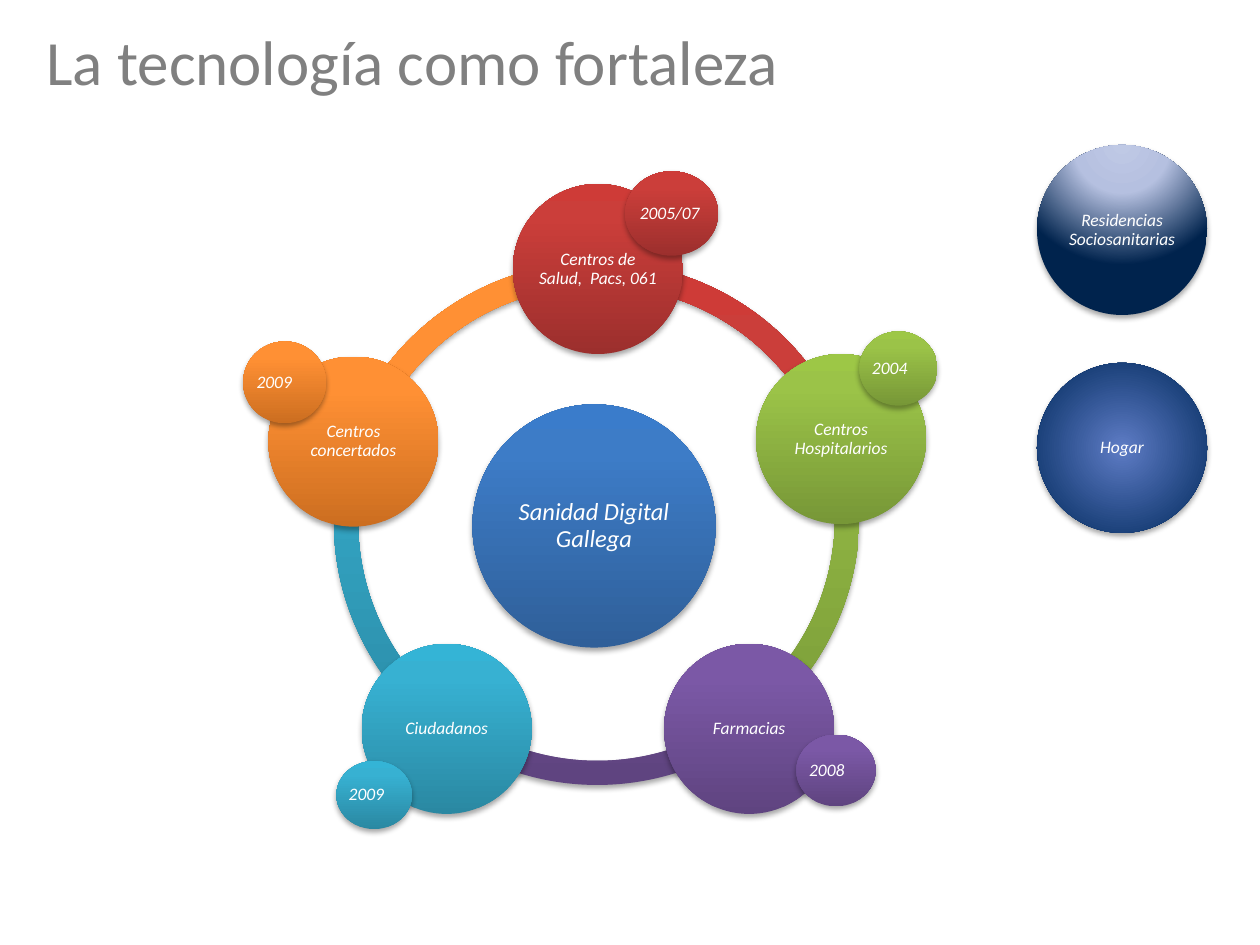
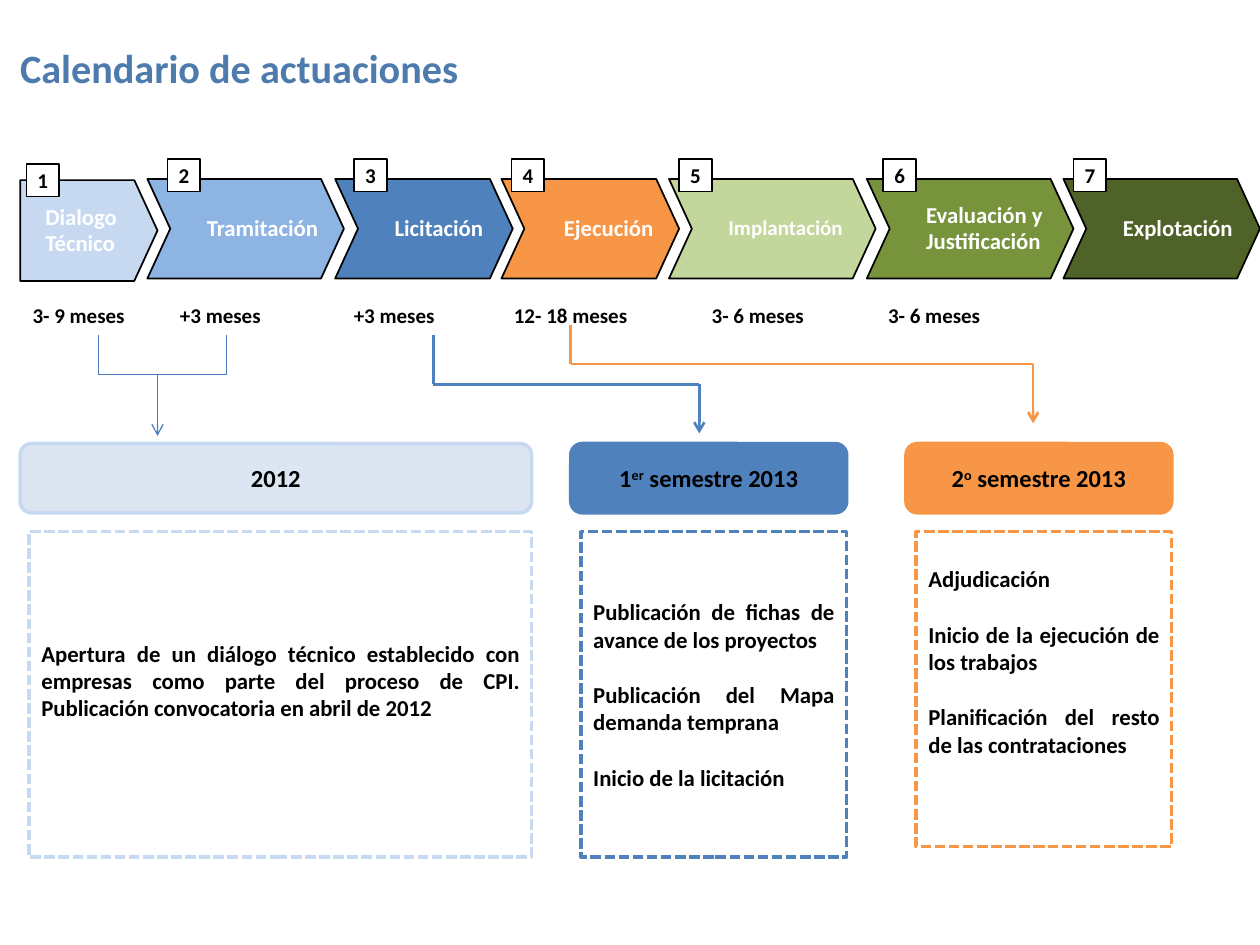
from lxml import etree
from pptx import Presentation
from pptx import util as u
from pptx.dml.color import RGBColor
from pptx.enum import dml, shapes, text
from pptx.oxml import parse_xml
from pptx.oxml.ns import nsdecls, qn

# Theme: gradients run from bottom to top
THEME = {
    "font": "Calibri",
    "white": "FFFFFF", "black": "000000", "grey": "808080", "title": "4D7BAD",
    "pale": "C6D9F1", "paler": "DCE6F2", "sky": "8EB4E3", "blue": "4F81BD",
    "thin": "4B7EBC", "orange": "F79646", "lime": "C3D69B", "olive": "77933C",
    "forest": "4F6228",
    "size": {"title": 36, "heading": 23, "hub": 14, "node": 10,
             "step": 13, "label": 12, "period": 14, "body": 13},
    "grad": {
        "red": [(0, "9C2F2D"), (80, "CB3E3A"), (100, "CE3B37")],
        "green": [(0, "779737"), (80, "9BC348"), (100, "9DC746")],
        "purple": [(0, "5F4480"), (80, "7B58A6"), (100, "7C57A8")],
        "cyan": [(0, "2A88A2"), (80, "37B1D2"), (100, "34B4D6")],
        "orange": [(0, "CC6E20"), (80, "FF9034"), (100, "FF9136")],
        "blue": [(0, "2F5F99"), (80, "3D7CC7"), (100, "3A7CCB")],
        "glow": [(0, "BFC9E5"), (40, "B5C0E0"), (100, "00234D")],
        "navy": [(0, "5E7CC5"), (100, "00295C")],
    },
}
SIZE = THEME["size"]

# Slide 1 content: colour, arc corner, arc ends, node, node corner, year, year box
TITLE = "La tecnología como fortaleza"
RING, THICK, NODE = 4.18, 0.046, 1.35
HUB = ("Sanidad Digital Gallega", (3.75, 3.21, 1.93, 1.93))
NODES = [
    ("red", (2.67, 2.08), (161.79, 204.09), "Centros de Salud,  Pacs, 061",
     (4.07, 1.46), "2005/07", (4.96, 1.36, 0.74, 0.67)),
    ("green", (2.64, 2.01), (204.73, 32.41), "Centros Hospitalarios",
     (6, 2.81), "2004", (6.82, 2.63, 0.62, 0.59)),
    ("purple", (2.65, 2.05), (32.4, 75.6), "Farmacias",
     (5.27, 5.11), "2008", (6.32, 5.83, 0.63, 0.57)),
    ("cyan", (2.65, 2.05), (75.6, 118.8), "Ciudadanos",
     (2.87, 5.11), "2009", (2.67, 6.04, 0.6, 0.54)),
    ("orange", (2.64, 2.08), (119.43, 162.2), "Centros concertados",
     (2.13, 2.83), "2009", (1.93, 2.71, 0.66, 0.65)),
]
# Outer nodes: text, gradient, corner, focus of the radial gradient
OUTER = [
    ("Residencias Sociosanitarias", "glow", (8.23, 1.15), (50, -80, 50, 180)),
    ("Hogar", "navy", (8.23, 2.88), (50, 50, 50, 50)),
]

# Slide 2 content: step, fill, left, width, number left, duration, duration left
HEADING = "Calendario de actuaciones"
STEPS = [
    ("Dialogo Técnico", "pale", 0.16, 1.09, 0.21, "3- 9 meses", 0.16),
    ("Tramitación", "sky", 1.17, 1.56, 1.33, "+3 meses", 1.33),
    ("Licitación", "blue", 2.66, 1.41, 2.81, "+3 meses", 2.71),
    ("Ejecución", "orange", 3.98, 1.41, 4.06, "12- 18 meses", 3.98),
    ("Implantación", "lime", 5.31, 1.64, 5.39, "3- 6 meses", 5.55),
    ("Evaluación y Justificación", "olive", 6.88, 1.64, 7.01, "3- 6 meses", 6.95),
    ("Explotación", "forest", 8.44, 1.56, 8.52, None, None),
]
# Period: runs (text, raised), fill, line, left, width, body left, body height,
# lines of room kept under the body text, body paragraphs
PERIODS = [
    ([("2012", False)], "paler", "pale", 0.16, 4.06, 0.23, 2.58, 1,
     ["Apertura de un diálogo técnico establecido con empresas como parte del "
      "proceso de CPI. Publicación convocatoria en abril de 2012"]),
    ([("1", False), ("er", True), (" semestre 2013", False)],
     "blue", "blue", 4.53, 2.19, 4.61, 2.58, 0,
     ["Publicación de fichas de avance de los proyectos",
      "Publicación del Mapa demanda temprana", "Inicio de la licitación"]),
    ([("2", False), ("o", True), (" semestre 2013", False)],
     "orange", "orange", 7.19, 2.11, 7.27, 2.5, 2,
     ["Adjudicación", "Inicio de la ejecución de los trabajos",
      "Planificación del resto de las contrataciones"]),
]
# Links: colour, width, points; the last segment carries an arrow if asked
LINKS = [
    ("blue", 1.5, [(3.44, 2.66), (3.44, 3.05), (5.55, 3.05), (5.55, 3.44)], True),
    ("orange", 1.5, [(4.53, 2.58), (4.53, 2.89), (8.2, 2.89), (8.2, 3.36)], True),
    ("thin", 0.75, [(0.78, 2.66), (0.78, 2.97), (1.8, 2.97), (1.8, 2.66)], False),
    ("thin", 0.75, [(1.25, 2.97), (1.25, 3.46)], True),
]

KIND = shapes.MSO_SHAPE
LEFT, CENTER, JUSTIFY = (text.PP_ALIGN.LEFT, text.PP_ALIGN.CENTER,
                         text.PP_ALIGN.JUSTIFY)
TOP, MIDDLE, BOTTOM = (text.MSO_ANCHOR.TOP, text.MSO_ANCHOR.MIDDLE,
                       text.MSO_ANCHOR.BOTTOM)


def rgb(name):
    return RGBColor.from_string(THEME[name])


def write(sp, paragraphs, size, color, align=LEFT, anchor=MIDDLE,
          insets=(0.1, 0.05, 0.1, 0.05), wrap=True, indent=0, gap=0,
          spacing=None, **font):
    """Fill a shape with text; a paragraph is a string or (text, raised) runs."""
    tf = sp.text_frame
    sides = ("margin_left", "margin_top", "margin_right", "margin_bottom")
    frame = dict(zip(sides, map(u.Inches, insets)),
                 word_wrap=wrap, vertical_anchor=anchor)
    for key, value in frame.items():
        setattr(tf, key, value)
    for i, runs in enumerate(paragraphs):
        p = tf.add_paragraph() if i else tf.paragraphs[0]
        p.alignment = align
        if spacing:
            p.line_spacing = spacing
        if i and gap:
            p.space_before = u.Pt(gap)
        if indent:
            pPr = p._p.get_or_add_pPr()
            pPr.set("marL", str(u.Inches(indent)))
            pPr.set("indent", "0")
        for words, raised in [(runs, False)] if isinstance(runs, str) else runs:
            r = p.add_run()
            r.text = words
            look = dict(name=THEME["font"], size=u.Pt(size), **font)
            for key, value in look.items():
                setattr(r.font, key, value)
            r.font.color.rgb = rgb(color)
            if raised:
                r._r.get_or_add_rPr().set("baseline", "30000")


def label(s, box, words, size, color, **fmt):
    sp = s.shapes.add_textbox(*map(u.Inches, box))
    write(sp, [words], size, color, **fmt)


def shape(s, kind, box, fill=None, line=None, width=1, adj=()):
    sp = s.shapes.add_shape(kind, *map(u.Inches, box))
    sp.shadow.inherit = False
    for i, value in enumerate(adj):
        sp.adjustments[i] = value
    if fill:
        sp.fill.solid()
        sp.fill.fore_color.rgb = rgb(fill)
    if line:
        sp.line.color.rgb = rgb(line)
        sp.line.width = u.Pt(width)
    else:
        sp.line.fill.background()
    return sp


def glossy(s, kind, box, grad, focus=None, adj=()):
    """Borderless shape with a gradient and a soft shadow below it."""
    sp = shape(s, kind, box, adj=adj)
    stops = "".join(f'<a:gs pos="{pos * 1000}"><a:srgbClr val="{c}"/></a:gs>'
                    for pos, c in THEME["grad"][grad])
    if focus:
        rect = " ".join(f'{k}="{v * 1000}"' for k, v in zip("ltrb", focus))
        way = f'<a:path path="circle"><a:fillToRect {rect}/></a:path>'
    else:
        way = '<a:lin ang="16200000" scaled="0"/>'
    spPr = sp._element.spPr
    spPr.find(qn("a:prstGeom")).addnext(parse_xml(
        f'<a:gradFill {nsdecls("a")} rotWithShape="1">'
        f'<a:gsLst>{stops}</a:gsLst>{way}</a:gradFill>'))
    spPr.find(qn("a:effectLst")).append(parse_xml(
        f'<a:outerShdw {nsdecls("a")} blurRad="40000" dist="23000" dir="5400000" '
        'rotWithShape="0"><a:srgbClr val="000000"><a:alpha val="35000"/>'
        '</a:srgbClr></a:outerShdw>'))
    return sp


def bubble(s, box, words, grad, size=SIZE["node"], align=CENTER, focus=None):
    sp = glossy(s, KIND.OVAL, box, grad, focus)
    write(sp, [words], size, "white", align=align, insets=(0.01,) * 4,
          spacing=0.9, italic=True)


def link(s, points, color, width, arrow):
    for i, (a, b) in enumerate(zip(points, points[1:]), 2):
        c = s.shapes.add_connector(shapes.MSO_CONNECTOR.STRAIGHT,
                                   *map(u.Inches, a + b))
        c.line.color.rgb = rgb(color)
        c.line.width = u.Pt(width)
        if arrow and i == len(points):
            etree.SubElement(c.line._get_or_add_ln(), qn("a:tailEnd"), type="arrow")
        etree.SubElement(c._element.spPr, qn("a:effectLst"))


def ring_slide(s):
    label(s, (0.27, 0.13, 8.91, 0.71), TITLE, SIZE["title"], "grey", anchor=TOP)
    # Ring, hub, nodes and their years
    for grad, corner, ends, *_ in reversed(NODES):
        glossy(s, KIND.BLOCK_ARC, corner + (RING, RING), grad, adj=ends + (THICK,))
    bubble(s, HUB[1], HUB[0], "blue", SIZE["hub"])
    for grad, _, _, words, corner, _, _ in NODES:
        bubble(s, corner + (NODE, NODE), words, grad)
    for grad, *_, year, box in NODES:
        bubble(s, box, year, grad, align=LEFT)
    # Nodes outside the ring
    for words, grad, corner, focus in OUTER:
        bubble(s, corner + (NODE, NODE), words, grad, focus=focus)


def calendar_slide(s):
    label(s, (0.16, 0.08, 8, 0.65), HEADING, SIZE["heading"], "title",
          anchor=BOTTOM, insets=(0,) * 4, bold=True)
    # Steps
    for i, (words, fill, x, w, *_) in enumerate(STEPS):
        kind = KIND.CHEVRON if i else KIND.PENTAGON
        top, high = (1.42, 0.79) if i else (1.43, 0.8)
        sp = shape(s, kind, (x, top, w, high), fill, "black", adj=(0.23,))
        small = words == "Implantación"
        write(sp, [words], SIZE["label" if small else "step"], "white",
              align=CENTER if words == "Ejecución" else LEFT,
              insets=(0, 0.05, 0, 0.05), indent=0.29 if i else 0.2,
              spacing=0.95, bold=True)
    # Numbers and durations
    for i, (*_, x, months, months_x) in enumerate(STEPS):
        sp = shape(s, KIND.RECTANGLE, (x, 1.26 if i else 1.3, 0.26, 0.26),
                   "white", "black")
        write(sp, [str(i + 1)], SIZE["label"], "black", align=CENTER,
              insets=(0,) * 4, wrap=False, bold=True)
        if months:
            label(s, (months_x, 2.35, 1.25, 0.3), months, SIZE["label"], "black",
                  anchor=TOP, bold=True)
    # Periods with their actions
    for runs, fill, line, x, w, body_x, body_h, room, body in PERIODS:
        sp = shape(s, KIND.ROUNDED_RECTANGLE, (x, 3.52, w, 0.55), fill, line, 2)
        write(sp, [runs], SIZE["period"], "black", align=CENTER, bold=True)
        sp = shape(s, KIND.RECTANGLE, (body_x, 4.22, x + w - body_x, body_h),
                   "white", line, 2)
        sp.line.dash_style = dml.MSO_LINE.SQUARE_DOT
        write(sp, body, SIZE["body"], "black", align=JUSTIFY, gap=16,
              insets=(0.1, 0.05, 0.1, 0.05 + 0.22 * room), bold=True)
    # Links from steps to periods
    for color, width, points, arrow in LINKS:
        link(s, points, color, width, arrow)


def main():
    prs = Presentation()
    prs.slide_width, prs.slide_height = u.Inches(10), u.Inches(7.5)
    for build in (ring_slide, calendar_slide):
        build(prs.slides.add_slide(prs.slide_layouts[6]))
    prs.save("out.pptx")


if __name__ == "__main__":
    main()
